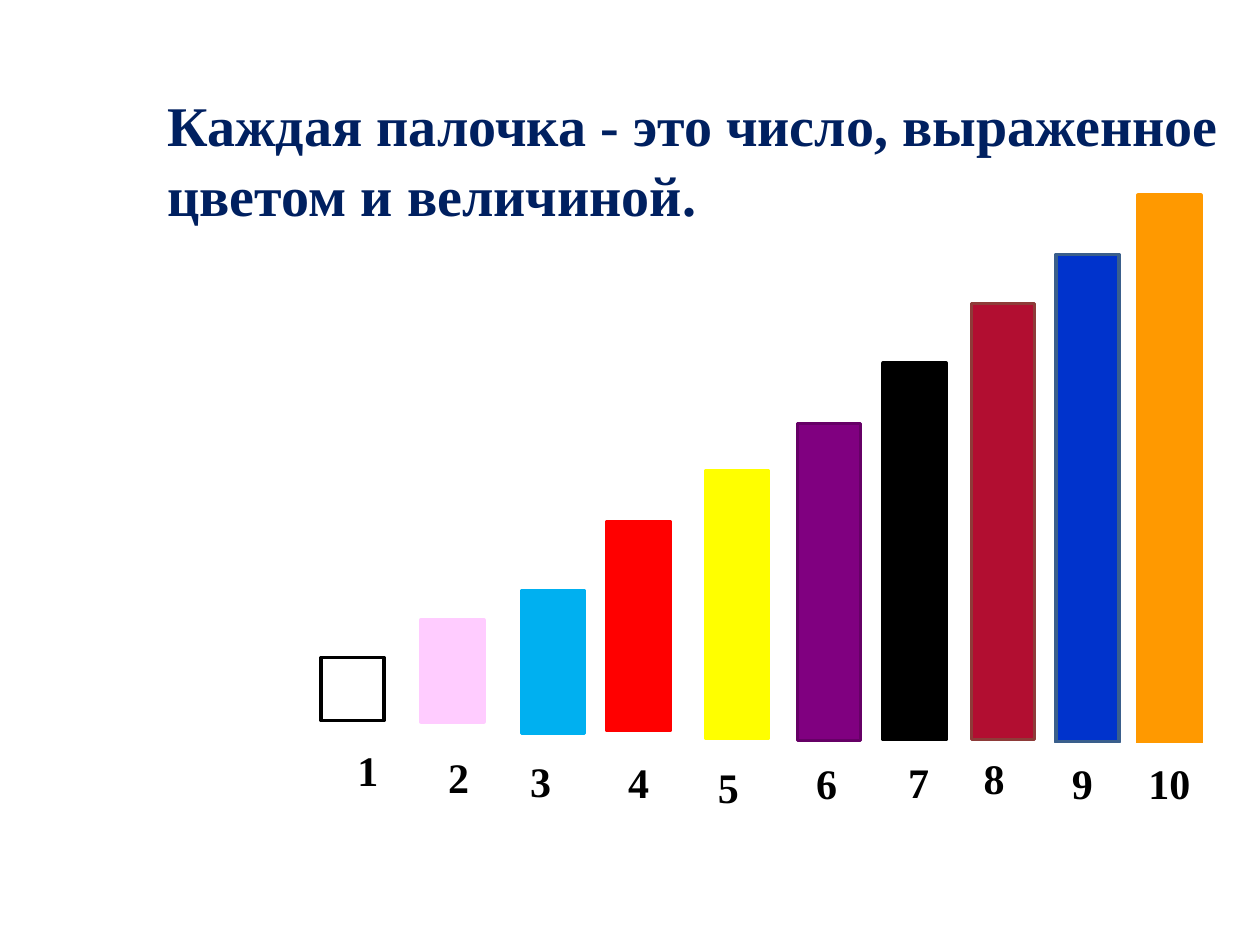
from typing import NamedTuple

from pptx import Presentation
from pptx.dml.color import RGBColor
from pptx.enum.shapes import MSO_SHAPE
from pptx.enum.text import MSO_ANCHOR, PP_ALIGN
from pptx.util import Pt

RECT = MSO_SHAPE.RECTANGLE
TOP, MIDDLE = MSO_ANCHOR.TOP, MSO_ANCHOR.MIDDLE
CENTER = PP_ALIGN.CENTER
FONT = "Times New Roman"
STICK_W = 36
LABEL_W, LABEL_H = 50.4, 39.6


class Stick(NamedTuple):
    number: int
    left: float
    top: float
    height: float
    fill: str
    line: str
    label_left: float
    label_top: float


STICKS = [
    Stick(1, 183.6, 375.8, 36, "FFFFFF", "000000", 185, 417.6),
    Stick(2, 240.5, 354.2, 58.3, "FFCCFF", "FFCCFF", 236.9, 421.9),
    Stick(3, 298.1, 337.7, 81.4, "00B0F0", "00B0F0", 283.7, 424.1),
    Stick(4, 347, 298.1, 119.5, "FF0000", "FF0000", 339.8, 424.8),
    Stick(5, 403.2, 269.3, 152.6, "FFFF00", "FFFF00", 391, 427.7),
    Stick(6, 455.8, 241.9, 181.4, "800080", "660066", 447.1, 425.5),
    Stick(7, 504.7, 207.4, 215.3, "000000", "000000", 499.7, 424.8),
    Stick(8, 555.1, 173.5, 249.1, "B20E31", "8E3B39", 542.9, 422.6),
    Stick(9, 603.4, 145.4, 278.6, "0033CC", "3A5F8C", 593.3, 425.5),
    Stick(10, 650.2, 111.6, 316.8, "FF9900", "FF9900", 643, 425.5),
]


def rgb(value: str) -> RGBColor:
    return RGBColor.from_string(value)


def add_run(p, text: str, size: float, color: str) -> None:
    r = p.add_run()
    r.text = text
    r.font.name = FONT
    r.font.size = Pt(size)
    r.font.bold = True
    r.font.color.rgb = rgb(color)


def add_rect(s, left: float, top: float, width: float, height: float,
             fill: str, line: str):
    sp = s.shapes.add_shape(RECT, Pt(left), Pt(top), Pt(width), Pt(height))
    sp.shadow.inherit = False
    sp.fill.solid()
    sp.fill.fore_color.rgb = rgb(fill)
    sp.line.color.rgb = rgb(line)
    sp.line.width = Pt(2)
    return sp


def add_stick(s, stick: Stick) -> None:
    add_rect(s, stick.left, stick.top, STICK_W, stick.height,
             stick.fill, stick.line)


def add_label(s, stick: Stick) -> None:
    sp = add_rect(s, stick.label_left, stick.label_top, LABEL_W, LABEL_H,
                  "FFFFFF", "FFFFFF")
    tf = sp.text_frame
    tf.vertical_anchor = MIDDLE
    p = tf.paragraphs[0]
    p.alignment = CENTER
    p.line_spacing = 1.15
    p.space_after = Pt(10)
    add_run(p, str(stick.number), 24, "000000")


def add_title(s, text: str) -> None:
    sp = s.shapes.add_textbox(Pt(88.6), Pt(46), Pt(655), Pt(85))
    tf = sp.text_frame
    tf.word_wrap = True
    tf.vertical_anchor = TOP
    p = tf.paragraphs[0]
    p.line_spacing = 1.05
    add_run(p, text, 32, "002060")


def main() -> None:
    prs = Presentation()
    prs.slide_width, prs.slide_height = Pt(720), Pt(540)
    s = prs.slides.add_slide(prs.slide_layouts[6])
    add_title(s, "Каждая палочка - это число, выраженное цветом и величиной.")
    behind, front = STICKS[8:], STICKS[:8]
    for stick in reversed(behind):
        add_stick(s, stick)
    for stick in reversed(STICKS):
        add_label(s, stick)
    for stick in reversed(front):
        add_stick(s, stick)
    prs.save("out.pptx")


if __name__ == "__main__":
    main()
